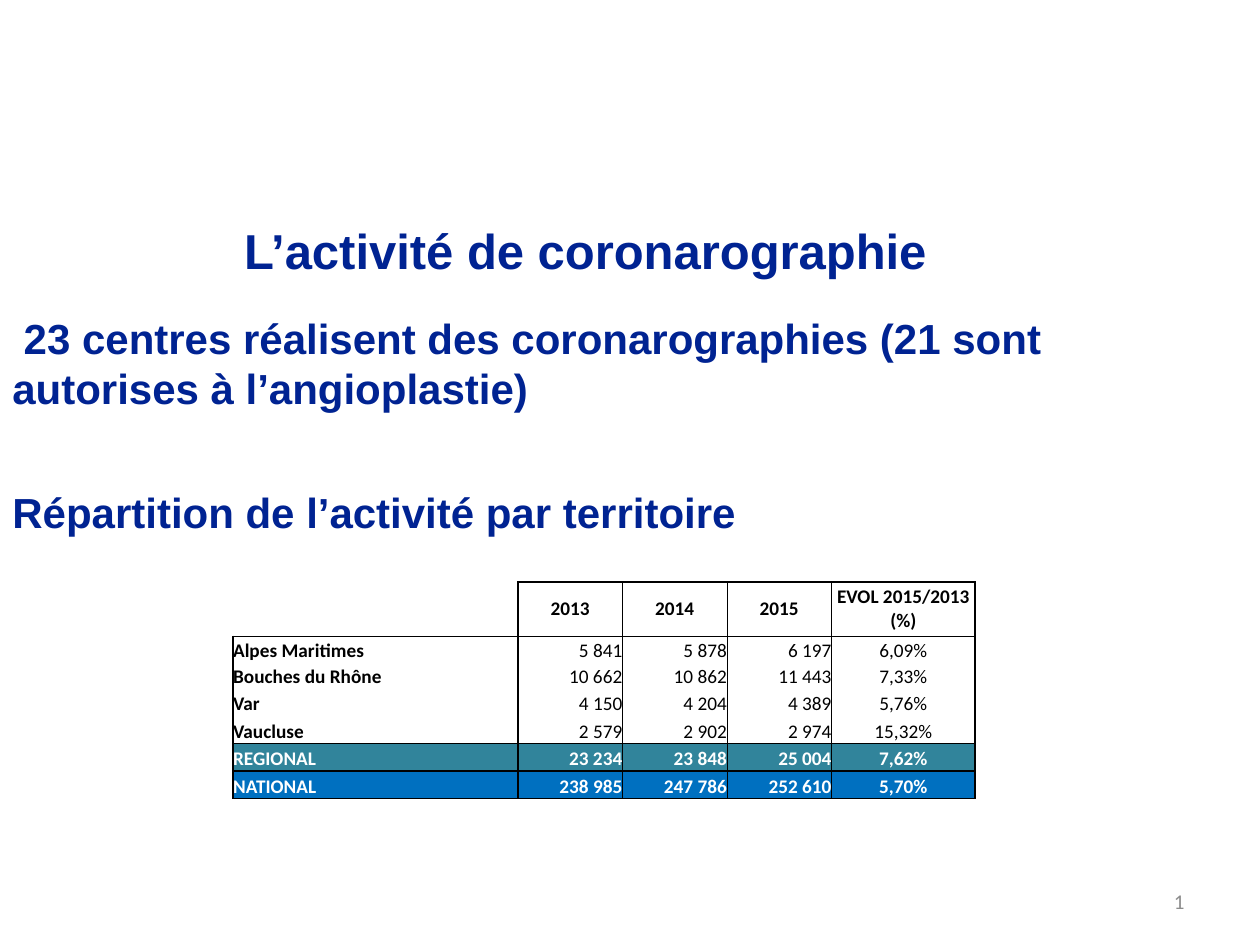
from lxml.etree import SubElement
from pptx import Presentation
from pptx.dml.color import RGBColor
from pptx.enum.text import MSO_ANCHOR as Anchor, PP_ALIGN as Align
from pptx.oxml.ns import qn
from pptx.util import Inches, Pt

NAVY = RGBColor(0x00, 0x23, 0x92)
BLACK = RGBColor(0x00, 0x00, 0x00)
WHITE = RGBColor(0xFF, 0xFF, 0xFF)
GREY = RGBColor(0x8C, 0x8C, 0x8C)
TEAL = RGBColor(0x31, 0x84, 0x9B)
BLUE = RGBColor(0x00, 0x70, 0xC0)

STATEMENTS = [
    "23 centres réalisent des coronarographies (21 sont autorises à l’angioplastie)",
    "Répartition de l’activité par territoire",
]
ACTIVITY = [
    ["", "2013", "2014", "2015", "EVOL 2015/2013\v(%)"],
    ["Alpes Maritimes", "5 841", "5 878", "6 197", "6,09%"],
    ["Bouches du Rhône", "10 662", "10 862", "11 443", "7,33%"],
    ["Var", "4 150", "4 204", "4 389", "5,76%"],
    ["Vaucluse", "2 579", "2 902", "2 974", "15,32%"],
    ["REGIONAL", "23 234", "23 848", "25 004", "7,62%"],
    ["NATIONAL", "238 985", "247 786", "252 610", "5,70%"],
]
COLUMN_WIDTHS = [2.26, 0.83, 0.83, 0.83, 1.14]
ROW_HEIGHTS = [0.43, 0.21, 0.21, 0.21, 0.22, 0.22, 0.22]
TOTAL_FILLS = {5: TEAL, 6: BLUE}
LAST_COLUMN = len(COLUMN_WIDTHS) - 1


def style_font(font, name, size, color, bold=False):
    """Set the face, size, colour and weight of a font."""
    font.name, font.size, font.bold = name, Pt(size), bold
    font.color.rgb = color


def add_title(slide, text):
    """Move the title placeholder into place and fill it."""
    title = slide.shapes.title
    title.left, title.top = Inches(1.77), Inches(1.55)
    title.width, title.height = Inches(5.75), Inches(0.87)
    title.text_frame.text = text
    title.text_frame.vertical_anchor = Anchor.MIDDLE
    heading = title.text_frame.paragraphs[0]
    heading.alignment = Align.CENTER
    style_font(heading.runs[0].font, "Arial", 28, NAVY, True)


def add_statements(slide, statements):
    """Write the key statements across the full slide width."""
    frame = slide.shapes.add_textbox(0, Inches(2.43), Inches(10), Inches(4.55)).text_frame
    frame.word_wrap = True
    frame.margin_right = Inches(0.3)
    frame.text = "\n".join(statements)
    opening, closing = frame.paragraphs
    opening._p.get_or_add_pPr().set("indent", str(Inches(0.09)))
    closing.space_before = Pt(42)
    for statement in frame.paragraphs:
        style_font(statement.runs[0].font, "Arial", 24, NAVY, True)


def add_slide_number(slide, number):
    """Write the slide number as a field at the bottom right."""
    frame = slide.shapes.add_textbox(
        Inches(7.17), Inches(6.95), Inches(2.33), Inches(0.4)).text_frame
    frame.word_wrap = True
    frame.vertical_anchor = Anchor.MIDDLE
    frame.text = number
    paragraph = frame.paragraphs[0]
    paragraph.alignment = Align.RIGHT
    run = paragraph.runs[0]
    style_font(run.font, "Calibri", 12, GREY)
    run._r.tag = qn("a:fld")
    run._r.set("id", "{B6F15528-21DE-4FAA-801E-634DDDAF4B2B}")
    run._r.set("type", "slidenum")


def border_widths(row, column):
    """Return the left, right, top and bottom line widths of a cell."""
    def vertical(edge):
        if edge == 0:
            return 0 if row == 0 else 1
        inner = 1 < edge < LAST_COLUMN or (edge == LAST_COLUMN and row > 0)
        return 0.5 if inner else 1

    def horizontal(edge):
        if edge == 0:
            return 0 if column == 0 else 1
        return 1 if edge == 1 or edge >= min(TOTAL_FILLS) else 0

    return {"L": vertical(column), "R": vertical(column + 1),
            "T": horizontal(row), "B": horizontal(row + 1)}


def draw_borders(cell, widths):
    """Draw black cell borders and clear those of zero width."""
    properties = cell._tc.get_or_add_tcPr()
    for side, width in widths.items():
        line = SubElement(properties, qn(f"a:ln{side}"), w=str(Pt(width)))
        if width:
            fill = SubElement(line, qn("a:solidFill"))
            SubElement(fill, qn("a:srgbClr"), val=str(BLACK))
        else:
            SubElement(line, qn("a:noFill"))


def fill_cell(cell, row, column, text):
    """Write and format one cell of the activity table."""
    cell.margin_left = cell.margin_right = cell.margin_top = cell.margin_bottom = 0
    cell.vertical_anchor = Anchor.MIDDLE if row == 0 else Anchor.BOTTOM
    draw_borders(cell, border_widths(row, column))
    is_total = row in TOTAL_FILLS
    if is_total:
        cell.fill.solid()
        cell.fill.fore_color.rgb = TOTAL_FILLS[row]
    else:
        cell.fill.background()
    cell.text_frame.text = text
    paragraph = cell.text_frame.paragraphs[0]
    if row == 0 or column == LAST_COLUMN:
        paragraph.alignment = Align.CENTER
    else:
        paragraph.alignment = Align.RIGHT if column else Align.LEFT
    bold = is_total or row == 0 or column == 0
    for run in paragraph.runs:
        style_font(run.font, "Calibri", 11, WHITE if is_total else BLACK, bold)


def add_activity_table(slide):
    """Add the table of activity by territory."""
    table = slide.shapes.add_table(
        len(ROW_HEIGHTS), len(COLUMN_WIDTHS), Inches(1.85), Inches(4.62),
        Inches(sum(COLUMN_WIDTHS)), Inches(sum(ROW_HEIGHTS))).table
    table.first_row = table.horz_banding = False
    for column, width in zip(table.columns, COLUMN_WIDTHS):
        column.width = Inches(width)
    for row, height in zip(table.rows, ROW_HEIGHTS):
        row.height = Inches(height)
    for row, values in enumerate(ACTIVITY):
        for column, text in enumerate(values):
            fill_cell(table.cell(row, column), row, column, text)


def main():
    """Build the slide and save it."""
    deck = Presentation()
    deck.slide_width, deck.slide_height = Inches(10), Inches(7.5)
    slide = deck.slides.add_slide(deck.slide_layouts[5])
    add_title(slide, "L’activité de coronarographie")
    add_statements(slide, STATEMENTS)
    add_slide_number(slide, "3")
    add_activity_table(slide)
    deck.save("out.pptx")


if __name__ == "__main__":
    main()
